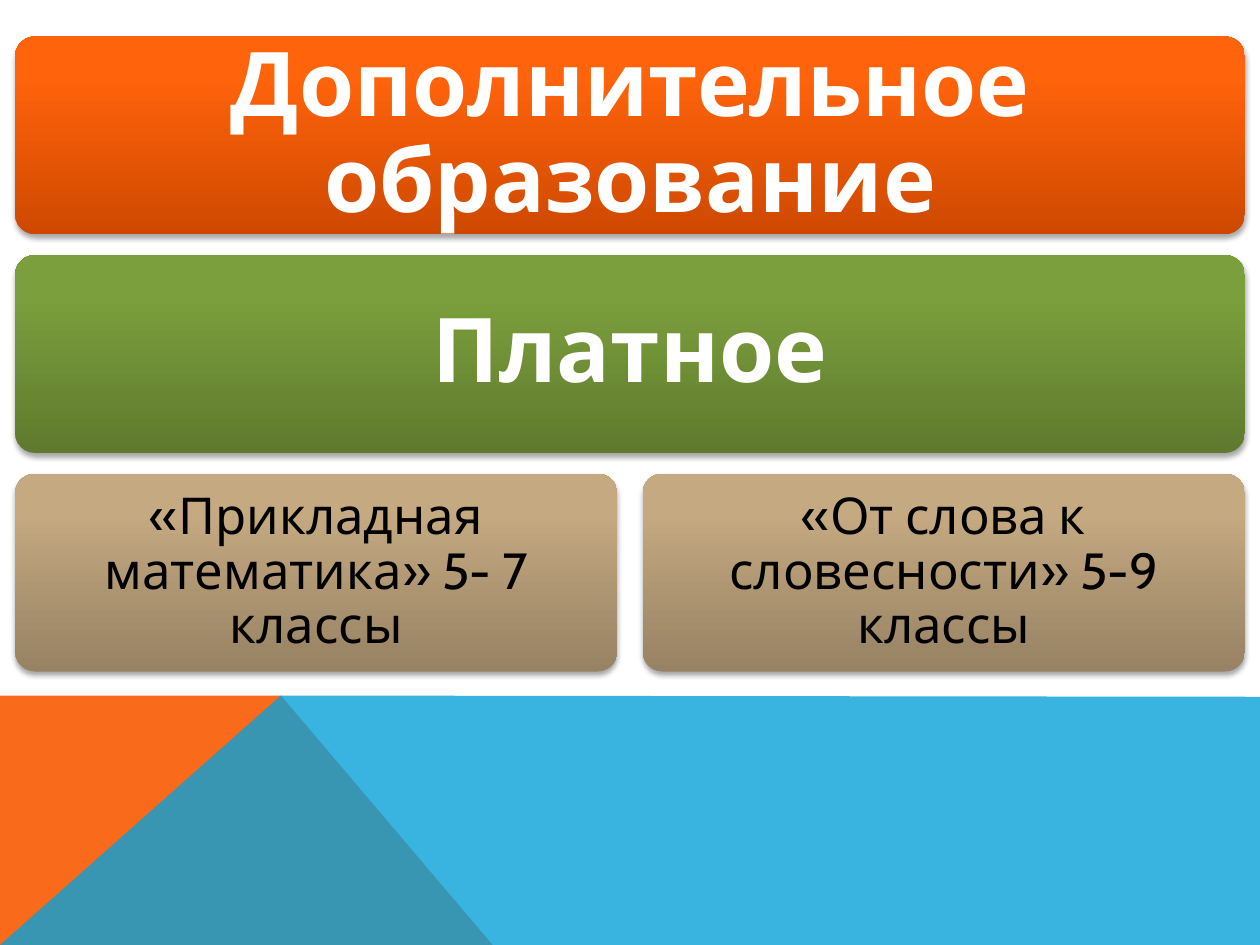
from pptx import Presentation
from pptx.dml.color import RGBColor
from pptx.enum.shapes import MSO_SHAPE as Shape
from pptx.enum.text import MSO_ANCHOR as Anchor, MSO_AUTO_SIZE as AutoSize, PP_ALIGN as Align
from pptx.oxml import parse_xml
from pptx.oxml.ns import nsdecls, qn
from pptx.util import Inches, Pt

ROWS = [
    ("heading", "orange", ["Дополнительное образование"]),
    ("heading", "green", ["Платное"]),
    ("course", "sand", ["«Прикладная математика» 5- 7 классы",
                        "«От слова к словесности» 5-9 классы"]),
]
BANDS = [
    ("F96A1B", 100, [(0, 7.5), (0, 5.52), (2.23, 5.52), (3.91, 7.5)]),
    ("08A1D9", 80, [(0, 7.5), (2.23, 5.52), (10, 5.53), (10, 7.5)]),
]
THEME = {
    "heading": {"size": Pt(51), "bold": True, "color": "FFFFFF", "inset": 0.26},
    "course": {"size": Pt(29), "bold": False, "color": "000000", "inset": 0.17},
    "font": "Cabin",
    "orange": ("CE4900", "FF630C", "FF640E"),
    "green": ("5F7A2E", "7B9F3C", "7CA13B"),
    "sand": ("978263", "C4A981", "C6AA80"),
}
WIDTH, HEIGHT = 10, 7.5
LEFT, TOP, CARD_HEIGHT = 0.12, 0.29, 1.57
ROW_STEP, COLUMN_GAP = 1.735, 0.2


def add_band(slide, color, opacity, points):
    corners = [(Inches(x), Inches(y)) for x, y in points]
    builder = slide.shapes.build_freeform(*corners[0], scale=1.0)
    builder.add_line_segments(corners[1:], close=True)
    shape = builder.convert_to_shape()
    shape.shadow.inherit = False
    shape.line.fill.background()
    shape.fill.solid()
    shape.fill.fore_color.rgb = RGBColor.from_string(color)
    if opacity < 100:
        color_element = next(shape._element.spPr.iter(qn("a:srgbClr")))
        color_element.append(parse_xml(f'<a:alpha {nsdecls("a")} val="{opacity * 1000}"/>'))


def add_card(slide, box, colors):
    shape = slide.shapes.add_shape(Shape.ROUNDED_RECTANGLE, *box)
    shape.adjustments[0] = 0.1
    stops = "".join(f'<a:gs pos="{place * 1000}"><a:srgbClr val="{color}"/></a:gs>'
                    for place, color in zip((0, 80, 100), colors))
    properties = shape._element.spPr
    properties.append(parse_xml(
        f'<a:gradFill {nsdecls("a")} rotWithShape="1"><a:gsLst>{stops}</a:gsLst>'
        '<a:lin ang="16200000" scaled="0"/></a:gradFill>'))
    shape.line.fill.background()
    properties.append(parse_xml(
        f'<a:effectLst {nsdecls("a")}><a:outerShdw blurRad="{Pt(3.1)}" dist="{Pt(1.8)}" '
        'dir="5400000" rotWithShape="0"><a:srgbClr val="000000"><a:alpha val="35000"/>'
        '</a:srgbClr></a:outerShdw></a:effectLst>'))
    return shape


def write_text(shape, text, style):
    frame = shape.text_frame
    frame.text = text
    inset = Inches(style["inset"])
    frame_format = {"word_wrap": True, "auto_size": AutoSize.NONE,
                    "vertical_anchor": Anchor.MIDDLE}
    frame_format.update({f"margin_{side}": inset for side in ("left", "top", "right", "bottom")})
    paragraph = frame.paragraphs[0]
    font = paragraph.runs[0].font
    formats = [
        (frame, frame_format),
        (paragraph, {"alignment": Align.CENTER, "line_spacing": 0.9}),
        (font, {"name": THEME["font"], "size": style["size"], "bold": style["bold"]}),
    ]
    for target, values in formats:
        for name, value in values.items():
            setattr(target, name, value)
    font.color.rgb = RGBColor.from_string(style["color"])


def place_title(slide, box):
    title = slide.shapes.title
    title.left, title.top, title.width, title.height = box
    slide.shapes._spTree.append(title._element)
    return title


def main():
    presentation = Presentation()
    presentation.slide_width, presentation.slide_height = Inches(WIDTH), Inches(HEIGHT)
    slide = presentation.slides.add_slide(presentation.slide_layouts[5])
    for band in BANDS:
        add_band(slide, *band)
    for row, (style, palette, texts) in enumerate(ROWS):
        columns = len(texts)
        width = (WIDTH - 2 * LEFT - COLUMN_GAP * (columns - 1)) / columns
        for column, text in enumerate(texts):
            left = LEFT + column * (width + COLUMN_GAP)
            box = [Inches(v) for v in (left, TOP + row * ROW_STEP, width, CARD_HEIGHT)]
            card = add_card(slide, box, THEME[palette])
            holder = place_title(slide, box) if row == 0 else card
            write_text(holder, text, THEME[style])
    presentation.save("out.pptx")


if __name__ == "__main__":
    main()
